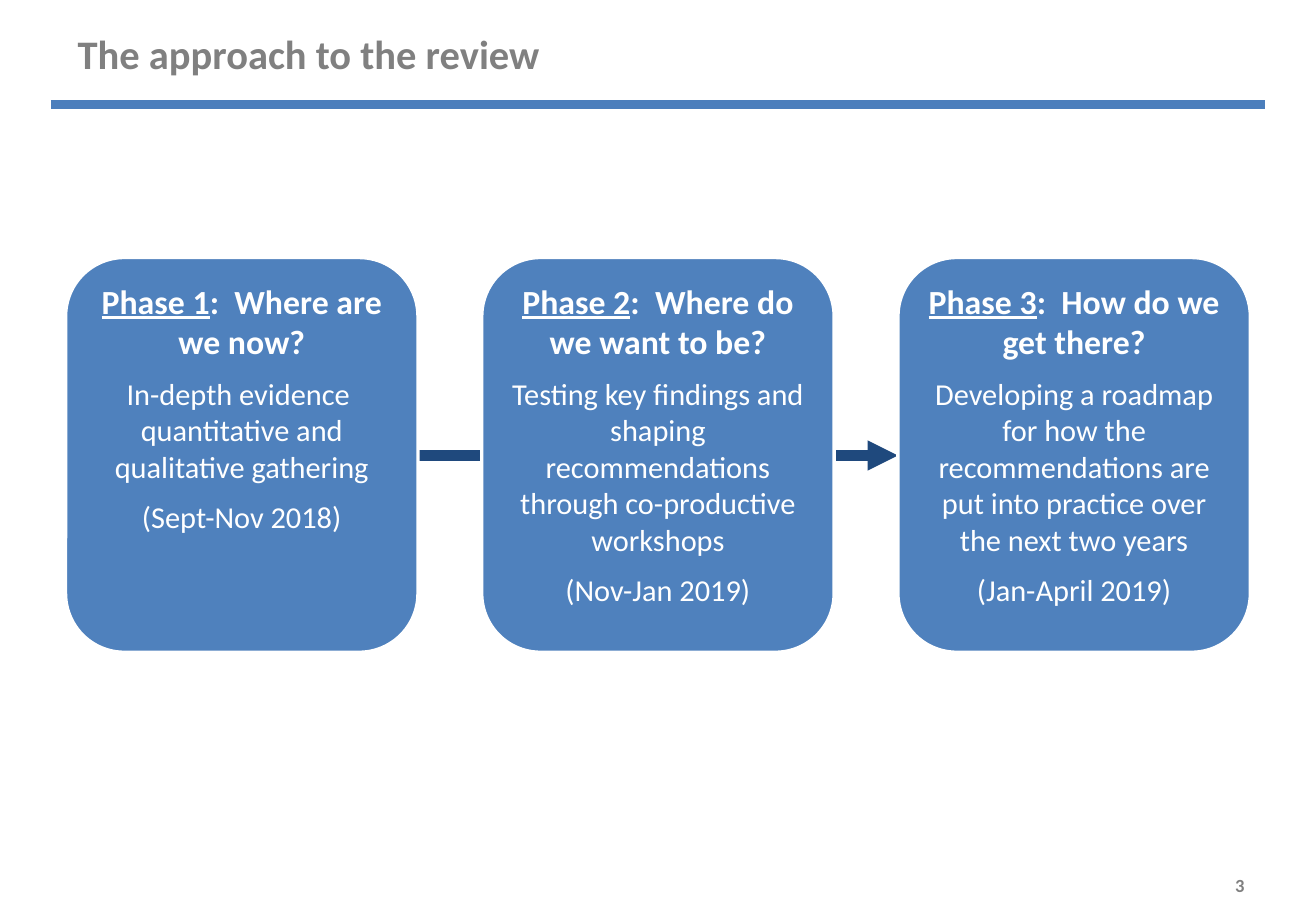
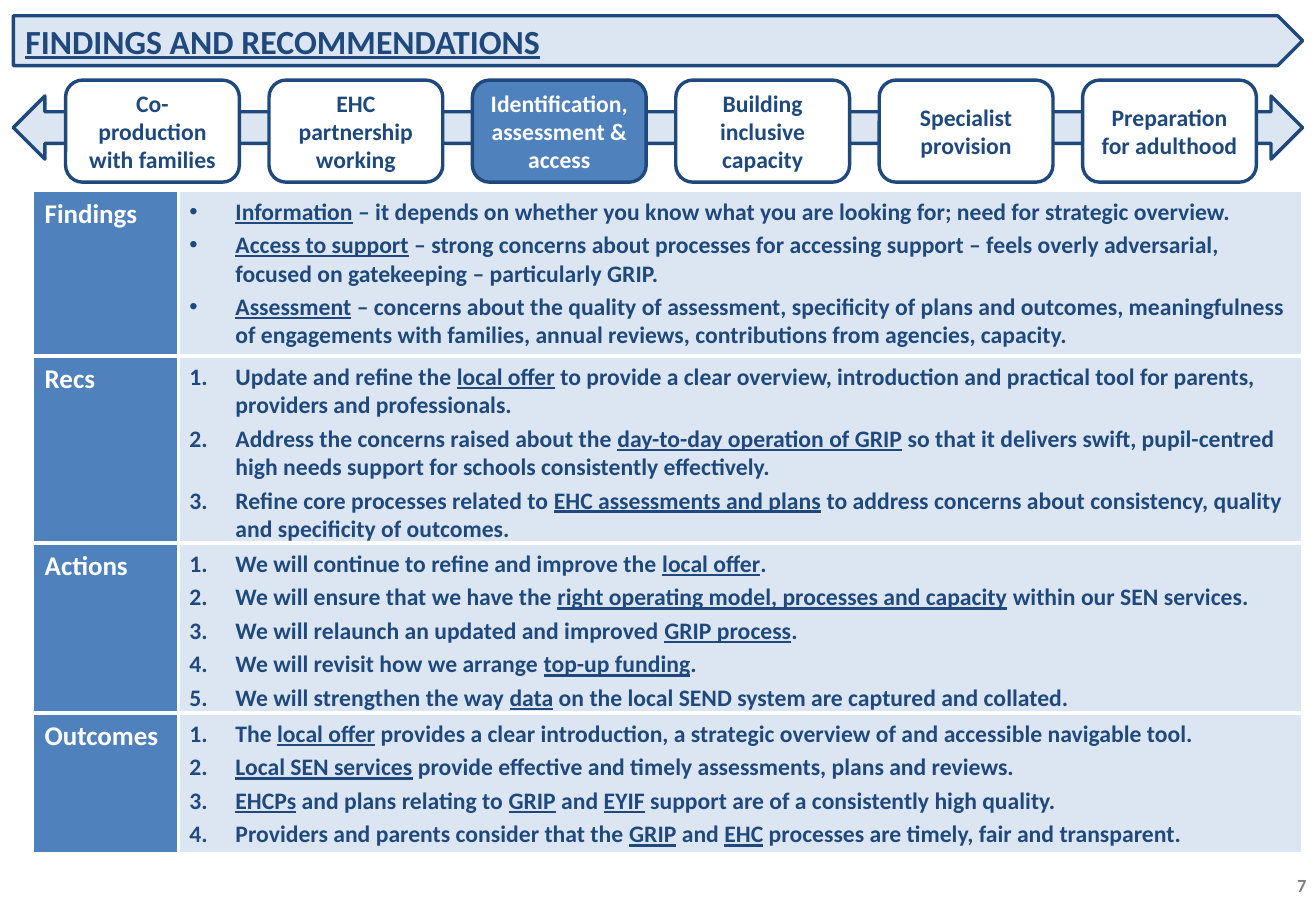
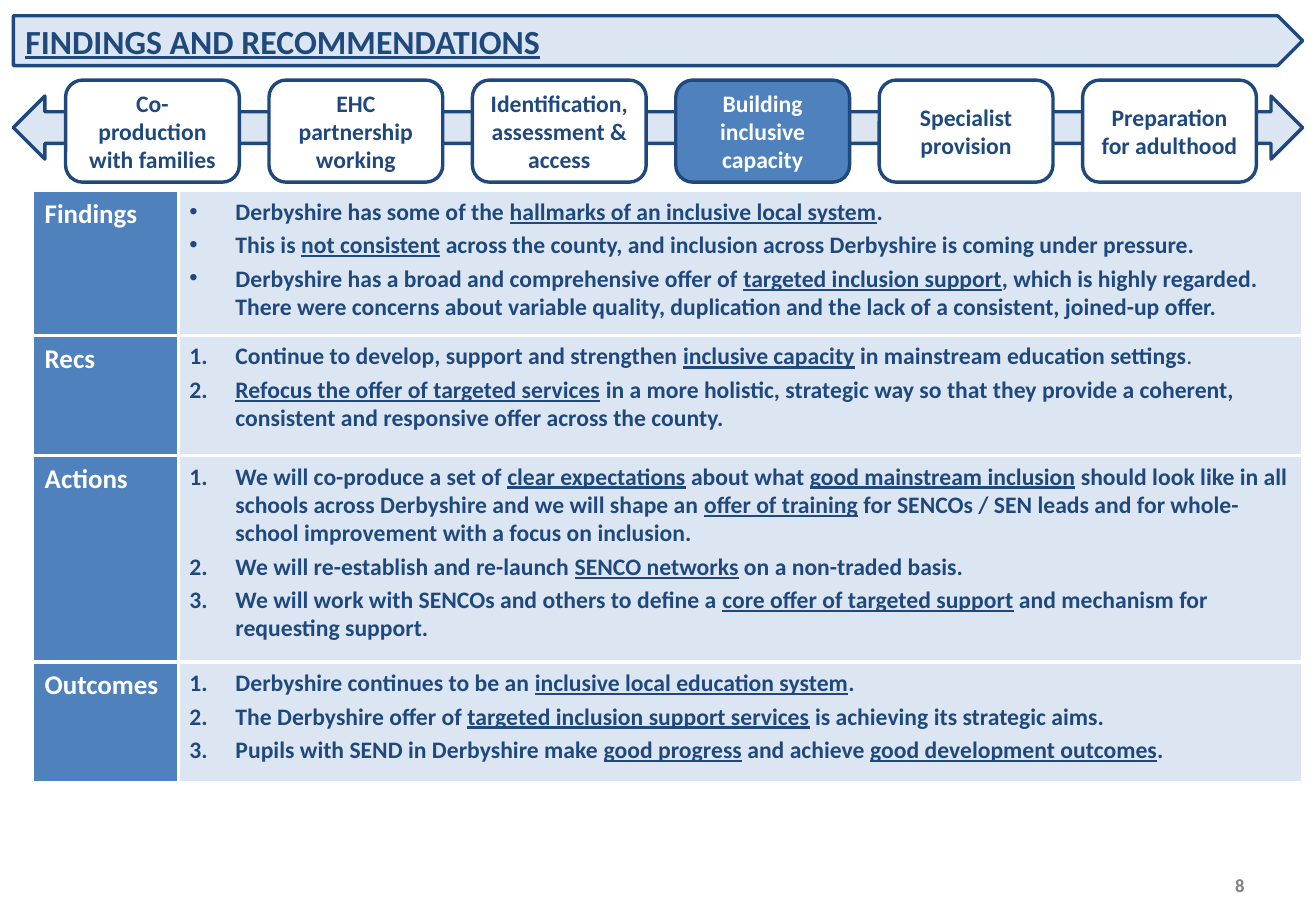
from dataclasses import dataclass
from typing import Any

from lxml import etree
from pptx import Presentation
from pptx import slide as sl
from pptx import util as u
from pptx.dml import color as dml
from pptx.enum import shapes as es
from pptx.enum import text as et
from pptx.oxml import ns
from pptx.shapes import autoshape as au
from pptx.shapes import connector as cn

COLOURS: dict[str, str] = {
    "white": "FFFFFF",
    "grey": "808080",
    "navy": "1F497D",
    "blue": "4F81BD",
    "pale": "DCE6F2",
    "rule": "4B7EBC",
}
FONT = "Calibri"
LEFT, CENTRE, RIGHT = et.PP_ALIGN.LEFT, et.PP_ALIGN.CENTER, et.PP_ALIGN.RIGHT
TOP, MIDDLE = et.MSO_ANCHOR.TOP, et.MSO_ANCHOR.MIDDLE
KIND = es.MSO_SHAPE
DOT, NUMBER = "dot", "number"
HANGING = u.Inches(0.38)


@dataclass(frozen=True)
class Box:
    left: float
    top: float
    width: float
    height: float

    def lengths(self) -> list[u.Length]:
        return [u.Inches(v) for v in (self.left, self.top, self.width, self.height)]


@dataclass(frozen=True)
class Style:
    size: float
    colour: str
    bold: bool = True
    align: Any = LEFT
    after: float = 0
    bullet: str = ""


@dataclass(frozen=True)
class Phase:
    heading: str
    summary: str
    dates: str


@dataclass(frozen=True)
class Row:
    label: str
    height: float
    items: list[str]
    bullet: str = NUMBER


@dataclass(frozen=True)
class Theme:
    name: str
    number: str
    number_left: float
    rows: list[Row]


TITLE = Style(24, "grey")
PAGE_NUMBER = Style(11, "grey", align=RIGHT)
BANNER = Style(20, "navy")
PHASE_HEADING = Style(20, "white", align=CENTRE, after=8)
PHASE_BODY = Style(18, "white", bold=False, align=CENTRE, after=8)
LABEL = Style(16, "white", after=6)

PHASES = [
    Phase(
        "_Phase 1_:  Where are we now?",
        "In-depth evidence  quantitative and qualitative gathering",
        "(Sept-Nov 2018)",
    ),
    Phase(
        "_Phase 2_:  Where do we want to be?",
        "Testing key findings and shaping recommendations through co-productive workshops",
        "(Nov-Jan 2019)",
    ),
    Phase(
        "_Phase 3_:  How do we get there?",
        "Developing a roadmap for how the recommendations are put into practice over the next two years",
        "(Jan-April 2019)",
    ),
]

THEME_NAMES = [
    "Co-production with families",
    "EHC partnership working",
    "Identification, assessment & access",
    "Building inclusive capacity",
    "Specialist provision",
    "Preparation for adulthood",
]

THEMES = [
    Theme("Identification, assessment & access", "7", 8.32, [
        Row("Findings", 1.36, [
            "_Information_ – it depends on whether you know what you are looking for; need for strategic overview.",
            "_Access to support_ – strong concerns about processes for accessing support – feels overly "
            "adversarial, focused on gatekeeping – particularly GRIP.",
            "_Assessment_ – concerns about the quality of assessment, specificity of plans and outcomes, "
            "meaningfulness of engagements with families, annual reviews, contributions from agencies, capacity.",
        ], DOT),
        Row("Recs", 1.54, [
            "Update and refine the _local offer_ to provide a clear overview, introduction and practical tool "
            "for parents, providers and professionals.",
            "Address the concerns raised about the _day-to-day operation of GRIP_ so that it delivers swift, "
            "pupil-centred high needs support for schools consistently effectively.",
            "Refine core processes related to _EHC assessments and plans_ to address concerns about "
            "consistency, quality and specificity of outcomes.",
        ]),
        Row("Actions", 1.4, [
            "We will continue to refine and improve the _local offer_.",
            "We will ensure that we have the _right operating model, processes and capacity_ within our SEN services.",
            "We will relaunch an updated and improved _GRIP process_.",
            "We will revisit how we arrange _top-up funding_.",
            "We will strengthen the way _data_ on the local SEND system are captured and collated.",
        ]),
        Row("Outcomes", 1.16, [
            "The _local offer_ provides a clear introduction, a strategic overview of and accessible navigable tool.",
            "_Local SEN services_ provide effective and timely assessments, plans and reviews.",
            "_EHCPs_ and plans relating to _GRIP_ and _EYIF_ support are of a consistently high quality.",
            "Providers and parents consider that the _GRIP_ and _EHC_ processes are timely, fair and transparent.",
        ]),
    ]),
    Theme("Building inclusive capacity", "8", 7.81, [
        Row("Findings", 1.19, [
            "Derbyshire has some of the _hallmarks of an inclusive local system_.",
            "This is _not consistent_ across the county, and inclusion across Derbyshire is coming under pressure.",
            "Derbyshire has a broad and comprehensive offer of _targeted inclusion support_, which is highly "
            "regarded. There were concerns about variable quality, duplication and the lack of a consistent, "
            "joined-up offer.",
        ], DOT),
        Row("Recs", 0.99, [
            "Continue to develop, support and strengthen _inclusive capacity_ in mainstream education settings*.*",
            "_Refocus the offer of targeted services_ in a more holistic, strategic way so that they provide a "
            "coherent, consistent and responsive offer across the county.",
        ]),
        Row("Actions", 1.7, [
            "We will co-produce a set of _clear expectations_ about what _good mainstream inclusion_ should "
            "look like in all schools across Derbyshire and we will shape an _offer of training_ for SENCOs / "
            "SEN leads and for whole-school improvement with a focus on inclusion.",
            "We will re-establish and re-launch _SENCO networks_ on a non-traded basis.",
            "We will work with SENCOs and others to define a _core offer of targeted support_ and mechanism "
            "for requesting support.",
        ]),
        Row("Outcomes", 0.99, [
            "Derbyshire continues to be an _inclusive local education system_.",
            "The Derbyshire offer of _targeted inclusion support services_ is achieving its strategic aims.",
            "Pupils with SEND in Derbyshire make _good progress_ and achieve _good development outcomes_.",
        ]),
    ]),
]


def rgb(colour: str) -> dml.RGBColor:
    return dml.RGBColor.from_string(COLOURS[colour])


def apply(target: Any, values: dict[str, Any]) -> None:
    for name, value in values.items():
        setattr(target, name, value)


def add_bullet(paragraph: Any, bullet: str) -> None:
    properties = paragraph._p.get_or_add_pPr()
    properties.set("marL", str(HANGING))
    properties.set("indent", str(-HANGING))
    if bullet == DOT:
        font = etree.SubElement(properties, ns.qn("a:buFont"))
        font.set("typeface", "Arial")
        etree.SubElement(properties, ns.qn("a:buChar")).set("char", "•")
    else:
        etree.SubElement(properties, ns.qn("a:buAutoNum")).set("type", "arabicPeriod")


def write(shape: au.Shape, lines: list[tuple[str, Style]], anchor: Any = MIDDLE) -> None:
    """Underscores enclose underlined words, asterisks enclose regular weight."""
    frame = shape.text_frame
    apply(frame, {"word_wrap": True, "vertical_anchor": anchor})
    for index, (line, style) in enumerate(lines):
        paragraph = frame.add_paragraph() if index else frame.paragraphs[0]
        if style.bullet:
            add_bullet(paragraph, style.bullet)
        apply(paragraph, {"alignment": style.align, "space_after": u.Pt(style.after)})
        for part, words in enumerate(line.split("_")):
            for piece, content in enumerate(words.split("*")):
                if content:
                    run = paragraph.add_run()
                    run.text = content
                    apply(run.font, {
                        "name": FONT,
                        "size": u.Pt(style.size),
                        "bold": style.bold and piece % 2 == 0,
                        "underline": part % 2 == 1,
                    })
                    run.font.color.rgb = rgb(style.colour)


def add_text(slide: sl.Slide, box: Box, content: str, style: Style) -> None:
    write(slide.shapes.add_textbox(*box.lengths()), [(content, style)])


def add_shape(slide: sl.Slide, kind: Any, box: Box, fill: str, outline: str) -> au.Shape:
    shape = slide.shapes.add_shape(kind, *box.lengths())
    shape.shadow.inherit = False
    shape.fill.solid()
    shape.fill.fore_color.rgb = rgb(fill)
    shape.line.color.rgb = rgb(outline)
    shape.line.width = u.Pt(2)
    return shape


def add_line(slide: sl.Slide, left: float, right: float, y: float, colour: str, width: float) -> cn.Connector:
    line = slide.shapes.add_connector(
        es.MSO_CONNECTOR.STRAIGHT, u.Inches(left), u.Inches(y), u.Inches(right), u.Inches(y)
    )
    line.line.color.rgb = rgb(colour)
    line.line.width = u.Pt(width)
    etree.SubElement(line._element.spPr, ns.qn("a:effectLst"))
    return line


def add_page_number(slide: sl.Slide, number: str, left: float = 7.81) -> None:
    add_text(slide, Box(left, 7.07, 2.53, 0.43), number, PAGE_NUMBER)


def build_approach(slide: sl.Slide) -> None:
    add_line(slide, 0.42, 10.41, 0.86, "rule", 5)
    add_text(slide, Box(0.54, -0.04, 9.75, 0.95), "The approach to the review", TITLE)
    add_page_number(slide, "3")
    arrow = add_line(slide, 3.44, 7.39, 3.75, "navy", 6)
    etree.SubElement(arrow.line._get_or_add_ln(), ns.qn("a:tailEnd")).set("type", "triangle")
    for index, phase in enumerate(PHASES):
        box = Box(0.54 + index * 3.425, 2.12, 2.9, 3.25)
        card = add_shape(slide, KIND.ROUNDED_RECTANGLE, box, "blue", "white")
        write(card, [
            (phase.heading, PHASE_HEADING),
            (phase.summary, PHASE_BODY),
            (phase.dates, PHASE_BODY),
        ], TOP)


def add_navigation(slide: sl.Slide, current: str) -> None:
    banner = add_shape(slide, KIND.PENTAGON, Box(0.11, 0.13, 10.61, 0.41), "pale", "navy")
    write(banner, [("_FINDINGS AND RECOMMENDATIONS_", BANNER)])
    add_shape(slide, KIND.LEFT_RIGHT_ARROW, Box(0.11, 0.79, 10.61, 0.52), "pale", "navy")
    for index, name in enumerate(THEME_NAMES):
        fill, colour = ("blue", "white") if name == current else ("white", "navy")
        box = Box(0.54 + index * 1.674, 0.66, 1.43, 0.84)
        step = add_shape(slide, KIND.ROUNDED_RECTANGLE, box, fill, "navy")
        write(step, [(name, Style(14, colour, align=CENTRE))])


def build_theme(slide: sl.Slide, theme: Theme) -> None:
    add_page_number(slide, theme.number, theme.number_left)
    add_navigation(slide, theme.name)
    top = 1.57
    for row in theme.rows:
        body = add_shape(slide, KIND.RECTANGLE, Box(1.46, top, 9.26, row.height), "pale", "white")
        style = Style(14, "navy", after=3, bullet=row.bullet)
        write(body, [(item, style) for item in row.items], TOP)
        label = add_shape(slide, KIND.RECTANGLE, Box(0.27, top, 1.2, row.height), "blue", "white")
        write(label, [(row.label, LABEL)], TOP)
        top += row.height


def main() -> None:
    presentation = Presentation()
    apply(presentation, {"slide_width": u.Inches(10.83), "slide_height": u.Inches(7.5)})
    blank = presentation.slide_layouts[6]
    build_approach(presentation.slides.add_slide(blank))
    for theme in THEMES:
        build_theme(presentation.slides.add_slide(blank), theme)
    presentation.save("out.pptx")


if __name__ == "__main__":
    main()
